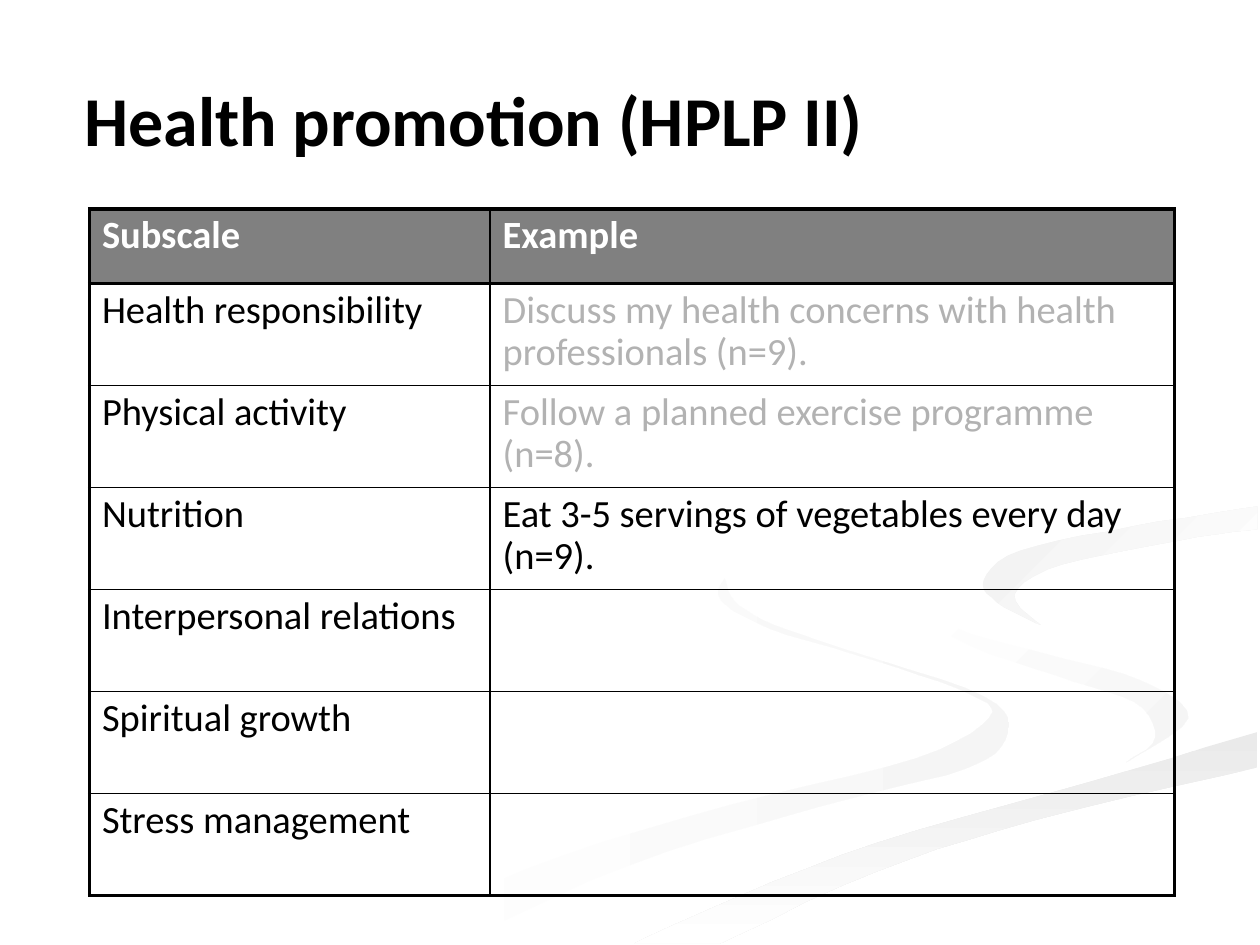
from lxml.etree import SubElement
from pptx import Presentation
from pptx.dml.color import RGBColor
from pptx.enum.text import MSO_ANCHOR, PP_ALIGN
from pptx.oxml.ns import qn
from pptx.util import Inches, Pt

FONT = "Calibri"
BLACK, WHITE, GREY, FADED = "000000", "FFFFFF", "808080", "B2B2B2"
THICK, THIN = Pt(2.25), Pt(1)
STEPS = 5


def paint(color, value):
    color.rgb = RGBColor.from_string(value)


def smooth_edge(knots):
    """Catmull-Rom curve through the knots."""
    padded = [knots[0], *knots, knots[-1]]
    curve = [knots[0]]
    for a, b, c, d in zip(padded, padded[1:], padded[2:], padded[3:]):
        for t in (step / STEPS for step in range(1, STEPS + 1)):
            curve.append(tuple(
                q + t / 2 * (r - p + t * (2*p - 5*q + 4*r - s + t * (3*q - p - 3*r + s)))
                for p, q, r, s in zip(a, b, c, d)))
    return curve


deck = Presentation()
deck.slide_width, deck.slide_height = W, H = Inches(10), Inches(7.5)
slide = deck.slides.add_slide(deck.slide_layouts[5])

# Background ribbons: start colour, end colour, clockwise angle, two edges
# Edge knots are in hundredths of an inch
ribbons = [
    ("FFFFFF", "F5F5F5", 0,
     [(575, 459), (583, 477), (614, 496), (682, 519), (781, 553), (800, 581),
      (769, 609), (651, 640), (499, 687), (361, 749)],
     [(575, 459), (572, 476), (611, 499), (697, 525), (770, 551), (785, 570),
      (727, 602), (579, 639), (417, 690), (300, 749)]),
    ("FFFFFF", "F5F5F5", 45,
     [(724, 464), (758, 498), (830, 519), (905, 540), (943, 570), (894, 605)],
     [(724, 464), (755, 505), (838, 536), (900, 557), (917, 585), (894, 605)]),
    ("EAEAEA", "FFFFFF", 90,
     [(503, 749), (569, 719), (696, 669), (867, 620), (998, 581)],
     [(571, 749), (695, 692), (821, 651), (998, 609)]),
    ("F1F1F1", "FFFFFF", 45,
     [(826, 496), (791, 478), (781, 460), (810, 437), (898, 418), (998, 402)],
     [(826, 496), (805, 472), (843, 448), (936, 429), (998, 420)]),
]
for start, end, angle, near_edge, far_edge in ribbons:
    outline = smooth_edge(near_edge) + smooth_edge(far_edge)[::-1]
    builder = slide.shapes.build_freeform(*outline[0], scale=Inches(1) / 100)
    builder.add_line_segments(outline[1:], close=True)
    ribbon = builder.convert_to_shape()
    ribbon.shadow.inherit = False
    ribbon.line.fill.background()
    ribbon.fill.gradient()
    ribbon.fill.gradient_angle = (360 - angle) % 360
    for stop, value in zip(ribbon.fill.gradient_stops, (start, end)):
        paint(stop.color, value)

# Title
title = slide.shapes.title
title.left, title.top = int(W * 0.067), int(H * 0.037)
title.width, title.height = int(W * 0.743), int(H * 0.133)
heading = title.text_frame
heading.margin_left = heading.margin_right = 0
heading.margin_top = heading.margin_bottom = 0
heading.vertical_anchor = MSO_ANCHOR.BOTTOM
heading.paragraphs[0].alignment = PP_ALIGN.LEFT
run = heading.paragraphs[0].add_run()
run.text = "Health promotion (HPLP II)"
run.font.name, run.font.size, run.font.bold = FONT, Pt(40), True
paint(run.font.color, BLACK)

# Subscale table: subscale, example and colour of the example in each row
rows = [
    ("Subscale", "Example", WHITE),
    ("Health responsibility",
     "Discuss my health concerns with health professionals (n=9).", FADED),
    ("Physical activity", "Follow a planned exercise programme (n=8).", FADED),
    ("Nutrition", "Eat 3-5 servings of vegetables every day (n=9).", BLACK),
    ("Interpersonal relations", "", BLACK),
    ("Spiritual growth", "", BLACK),
    ("Stress management", "", BLACK),
]
last = len(rows) - 1
subscales = slide.shapes.add_table(
    len(rows), 2, int(W * 0.071), int(H * 0.221), int(W * 0.861), int(H * 0.727)
).table
subscales.first_row = subscales.horz_banding = False
for column, share in zip(subscales.columns, (0.318, 0.543)):
    column.width = int(W * share)

for r, (subscale, example, example_color) in enumerate(rows):
    is_header = r == 0
    subscales.rows[r].height = int(H * (0.079 if is_header else 0.108))
    entries = [(subscale, WHITE if is_header else BLACK), (example, example_color)]
    for c, (words, color) in enumerate(entries):
        cell = subscales.cell(r, c)
        borders = {"lnL": c == 0, "lnR": c == 1, "lnT": r <= 1, "lnB": r in (0, last)}
        for side, is_thick in borders.items():
            line = SubElement(cell._tc.get_or_add_tcPr(), qn(f"a:{side}"),
                              w=str(THICK if is_thick else THIN))
            SubElement(SubElement(line, qn("a:solidFill")), qn("a:srgbClr"), val=BLACK)
        if is_header:
            cell.fill.solid()
            paint(cell.fill.fore_color, GREY)
        else:
            cell.fill.background()
        if words:
            paragraph = cell.text_frame.paragraphs[0]
            paragraph.line_spacing = 0.9
            run = paragraph.add_run()
            run.text = words
            run.font.name, run.font.size = FONT, Pt(22)
            run.font.bold = is_header
            paint(run.font.color, color)

deck.save("out.pptx")
